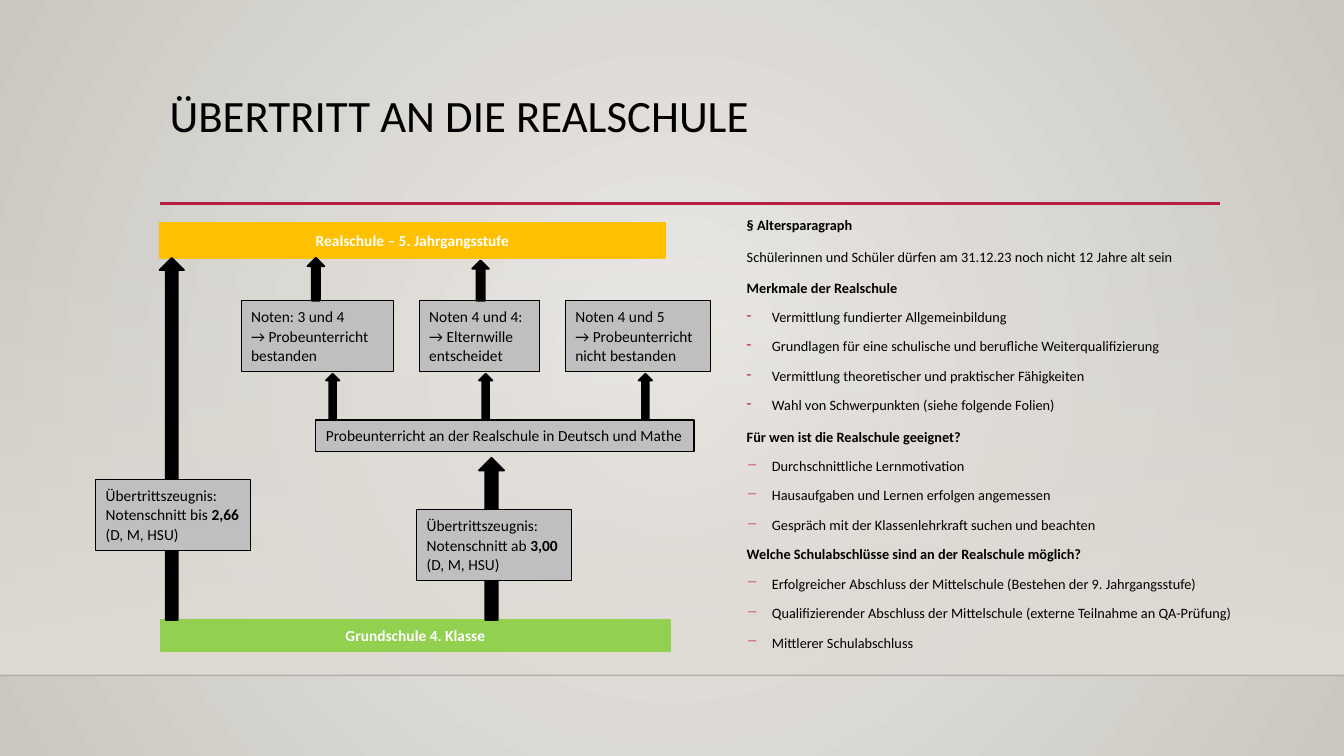
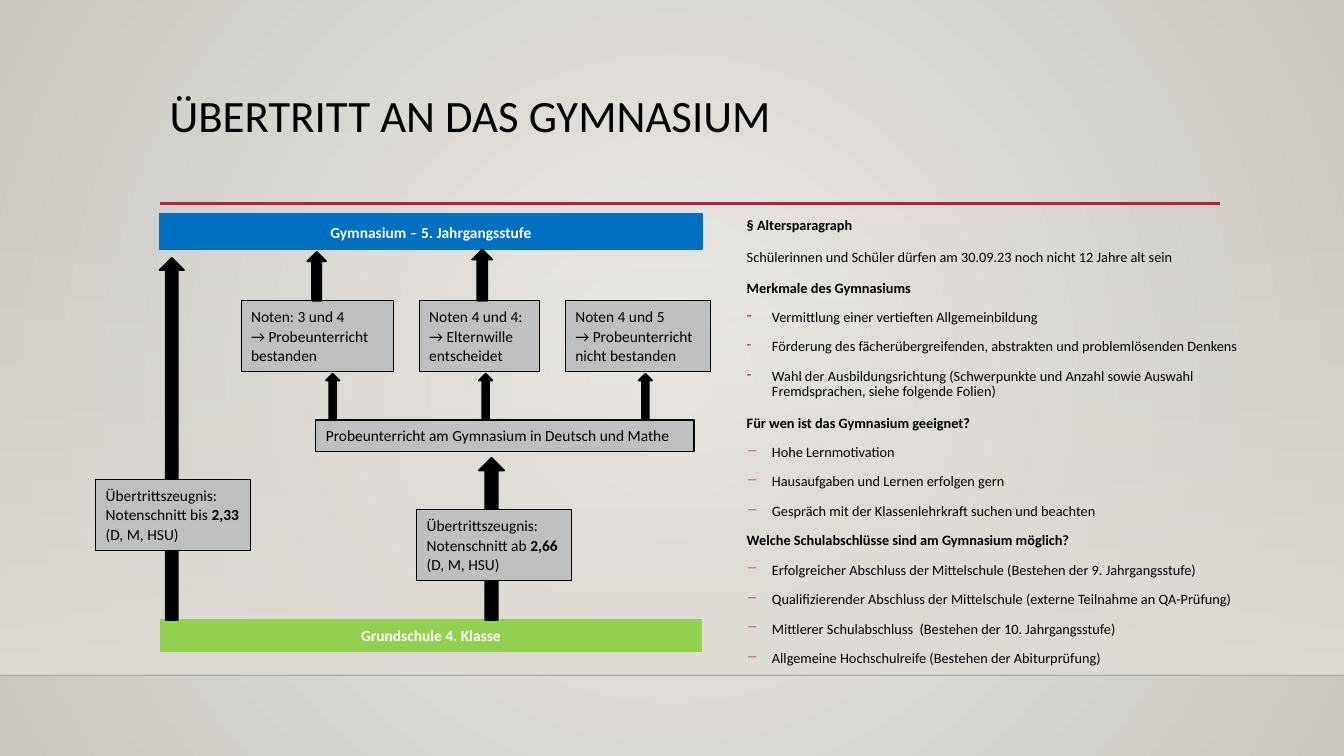
from collections import namedtuple

from lxml.etree import SubElement
from pptx import Presentation
from pptx.dml.color import RGBColor
from pptx.enum.shapes import MSO_CONNECTOR, MSO_SHAPE
from pptx.enum.text import MSO_ANCHOR, PP_ALIGN
from pptx.oxml.ns import qn
from pptx.util import Inches, Pt

BLACK = RGBColor(0x00, 0x00, 0x00)
WHITE = RGBColor(0xFF, 0xFF, 0xFF)
RED = RGBColor(0xB7, 0x1E, 0x42)
GREY = RGBColor(0xBF, 0xBF, 0xBF)
GREEN = RGBColor(0x92, 0xD0, 0x50)
YELLOW = RGBColor(0xFF, 0xC0, 0x00)
BLUE = RGBColor(0x00, 0x70, 0xC0)
BAND = RGBColor(0xDF, 0xDB, 0xD5)
PAPER_LIGHT = RGBColor(0xEC, 0xEA, 0xE7)
PAPER_DARK = RGBColor(0xCA, 0xC7, 0xC1)
FONT = "Calibri"

# The slide is a grid of 160 columns and 90 rows of equal size
WIDTH, HEIGHT = Inches(13.33), Inches(7.5)
CELL = HEIGHT / 90

Box = namedtuple("Box", "left top width height")
School = namedtuple("School", "title name colour bar_top bar_width ground_width "
                    "final_arrows exam direct_grade exam_grade notes")

BAND_BOX = Box(0, 26.5, WIDTH / CELL, 53.9)
TITLE_BOX = Box(19, 10.6, 126, 13.9)
DIAGRAM_BOX = Box(11.4, 25.5, 73.2, 52)
NOTES_BOX = Box(87.7, 25.2, 61.7, 54)

# Outcomes of the trial lessons: left, width, lines, left of the arrow below
OUTCOMES = [
    (17.3, 18.1, ["Noten: 3 und 4", "→ Probeunterricht bestanden"], 27.4),
    (38.5, 14.3, ["Noten 4 und 4:", "→ Elternwille entscheidet"], 45.6),
    (55.9, 17.3, ["Noten 4 und 5", "→ Probeunterricht nicht bestanden"], 64.6),
]
DEGREES = [
    "Erfolgreicher Abschluss der Mittelschule (Bestehen der 9. Jahrgangsstufe)",
    "Qualifizierender Abschluss der Mittelschule (externe Teilnahme an QA-Prüfung)",
]
ADVICE = "Gespräch mit der Klassenlehrkraft suchen und beachten"

# Notes: heading, bullet sign (empty for plain text), entries
SCHOOLS = [
    School(
        "ÜBERTRITT AN DIE REALSCHULE", "Realschule", YELLOW, 1, 60.2, 60.7,
        [(25.2, 5.2, 2), (44.8, 5.5, 2)],
        "Probeunterricht an der Realschule in Deutsch und Mathe", "2,66", "3,00",
        [
            ("§ Altersparagraph", "",
             ["Schülerinnen und Schüler dürfen am 31.12.23 noch nicht 12 Jahre alt sein"]),
            ("Merkmale der Realschule", "-",
             ["Vermittlung fundierter Allgemeinbildung",
              "Grundlagen für eine schulische und berufliche Weiterqualifizierung",
              "Vermittlung theoretischer und praktischer Fähigkeiten",
              "Wahl von Schwerpunkten (siehe folgende Folien)"]),
            ("Für wen ist die Realschule geeignet?", "−",
             ["Durchschnittliche Lernmotivation",
              "Hausaufgaben und Lernen erfolgen angemessen", ADVICE]),
            ("Welche Schulabschlüsse sind an der Realschule möglich?", "−",
             DEGREES + ["Mittlerer Schulabschluss"]),
        ]),
    School(
        "ÜBERTRITT AN DAS GYMNASIUM", "Gymnasium", BLUE, 0, 64.6, 64.4,
        [(25.2, 4.5, 2.2), (44.8, 4.2, 2.4)],
        "Probeunterricht am Gymnasium in Deutsch und Mathe", "2,33", "2,66",
        [
            ("§ Altersparagraph", "",
             ["Schülerinnen und Schüler dürfen am 30.09.23 noch nicht 12 Jahre alt sein"]),
            ("Merkmale des Gymnasiums", "-",
             ["Vermittlung einer vertieften Allgemeinbildung",
              "Förderung des fächerübergreifenden, abstrakten und problemlösenden Denkens",
              "Wahl der Ausbildungsrichtung (Schwerpunkte und Anzahl sowie Auswahl "
              "Fremdsprachen, siehe folgende Folien)"]),
            ("Für wen ist das Gymnasium geeignet?", "−",
             ["Hohe Lernmotivation", "Hausaufgaben und Lernen erfolgen gern", ADVICE]),
            ("Welche Schulabschlüsse sind am Gymnasium möglich?", "−",
             DEGREES + ["Mittlerer Schulabschluss  (Bestehen der 10. Jahrgangsstufe)",
                        "Allgemeine Hochschulreife (Bestehen der Abiturprüfung)"]),
        ]),
]


def cells(*counts):
    return [round(count * CELL) for count in counts]


def inside(box, left, top, width, height):
    return Box(box.left + left, box.top + top, width, height)


def set_font(paragraph, size, colour=BLACK, bold=False):
    font = paragraph.font
    font.name, font.size, font.bold = FONT, Pt(size), bold
    font.color.rgb = colour


def set_alpha(element, percent):
    colour = next(element.iter(qn("a:srgbClr")))
    SubElement(colour, qn("a:alpha")).set("val", str(percent * 1000))


def set_gradient(fill, *colours):
    fill.gradient()
    for stop, colour in zip(fill.gradient_stops, colours):
        stop.color.rgb = colour


def add_box(slide, kind, box, fill, line, line_width):
    shape = slide.shapes.add_shape(kind, *cells(*box))
    shape.shadow.inherit = False
    shape.fill.solid()
    shape.fill.fore_color.rgb = fill
    shape.line.color.rgb = line
    shape.line.width = Pt(line_width)
    return shape


def add_rule(slide, left, right, row, colour, width):
    start_x, end_x, y = cells(left, right, row)
    rule = slide.shapes.add_connector(MSO_CONNECTOR.STRAIGHT, start_x, y, end_x, y)
    rule.line.color.rgb = colour
    rule.line.width = Pt(width)
    SubElement(rule.element.spPr, qn("a:effectLst"))
    return rule


def add_bar(slide, box, text, colour):
    bar = add_box(slide, MSO_SHAPE.RECTANGLE, box, colour, colour, 1.25)
    bar.text_frame.vertical_anchor = MSO_ANCHOR.MIDDLE
    paragraph = bar.text_frame.paragraphs[0]
    paragraph.text = text
    paragraph.alignment = PP_ALIGN.CENTER
    set_font(paragraph, 11, WHITE, True)


def add_arrow(slide, box, left, top, width, bottom):
    add_box(slide, MSO_SHAPE.UP_ARROW, inside(box, left, top, width, bottom - top),
            BLACK, BLACK, 1.25)


def add_card(slide, box, lines):
    """Grey box with text lines; words between asterisks are bold."""
    card = add_box(slide, MSO_SHAPE.RECTANGLE, box, GREY, BLACK, 0.75)
    frame = card.text_frame
    frame.word_wrap = True
    frame.vertical_anchor = MSO_ANCHOR.TOP
    paragraph = frame.paragraphs[0]
    paragraph.alignment = PP_ALIGN.LEFT
    paragraph.line_spacing = 1.07
    set_font(paragraph, 11)
    for number, line in enumerate(lines):
        if number:
            paragraph.add_line_break()
        for position, part in enumerate(line.split("*")):
            run = paragraph.add_run()
            run.text = part
            if position % 2:
                run.font.bold = True


def add_text_box(slide, box):
    frame = slide.shapes.add_textbox(*cells(*box)).text_frame
    frame.word_wrap = True
    return frame


def style_master(master):
    """Radial background shared by all slides."""
    set_gradient(master.background.fill, PAPER_LIGHT, PAPER_DARK)
    gradient = next(master.element.iter(qn("a:gradFill")))
    gradient.remove(gradient.find(qn("a:lin")))
    circle = SubElement(gradient, qn("a:path"))
    circle.set("path", "circle")
    centre = SubElement(circle, qn("a:fillToRect"))
    for side in "ltrb":
        centre.set(side, "50000")


def add_frame(slide, title):
    # Band fading in towards the bottom, with its edge
    band = add_box(slide, MSO_SHAPE.RECTANGLE, BAND_BOX, BAND, BAND, 1)
    band.line.fill.background()
    set_gradient(band.fill, BAND, BAND)
    band.fill.gradient_angle = 270
    set_alpha(band.element.spPr, 0)
    edge = add_rule(slide, 0, BAND_BOX.width, BAND_BOX.top + BAND_BOX.height, BLACK, 1)
    set_alpha(edge.element.spPr, 20)
    # Title and red rule
    add_rule(slide, 19.1, 145.2, 24.2, RED, 2.5)
    paragraph = add_text_box(slide, TITLE_BOX).paragraphs[0]
    paragraph.text = title
    paragraph.line_spacing = 0.9
    set_font(paragraph, 32)


def add_diagram(slide, box, school):
    ground, exam_top, outcome_top, card_height = 48.3, 24.5, 10.3, 8.4
    # Start and goal
    add_bar(slide, inside(box, 7.7, ground, school.ground_width, 3.7),
            "Grundschule 4. Klasse", GREEN)
    add_bar(slide, inside(box, 7.6, school.bar_top, school.bar_width, 4.2),
            f"{school.name} – 5. Jahrgangsstufe", school.colour)
    # Direct way and way through the trial lessons
    ways = [
        (7.6, 5.2, 2.9, 0, 31.6, f"bis *{school.direct_grade}*"),
        (45.6, 29, 3, 38.2, 35.2, f"ab *{school.exam_grade}*"),
    ]
    for arrow_left, arrow_top, arrow_width, left, top, grade in ways:
        add_arrow(slide, box, arrow_left, arrow_top, arrow_width, ground)
        add_card(slide, inside(box, left, top, 18.4, card_height),
                 ["Übertrittszeugnis:", f"Notenschnitt {grade} (D, M, HSU)"])
    # Trial lessons and their outcomes
    add_card(slide, inside(box, 26.2, exam_top, 45, 3.7), [school.exam])
    for left, width, lines, arrow_left in OUTCOMES:
        add_card(slide, inside(box, left, outcome_top, width, card_height), lines)
        add_arrow(slide, box, arrow_left, 19, 1.6, exam_top)
    for left, top, width in school.final_arrows:
        add_arrow(slide, box, left, top, width, outcome_top)


def add_bullet(paragraph, sign):
    properties = paragraph._p.get_or_add_pPr()
    properties.set("marL", str(Inches(0.25)))
    properties.set("indent", str(-Inches(0.25)))
    colour = SubElement(properties, qn("a:buClr"))
    SubElement(colour, qn("a:srgbClr")).set("val", str(RED))
    SubElement(properties, qn("a:buChar")).set("char", sign)


def add_notes_column(slide, box, notes):
    frame = add_text_box(slide, box)
    for number, (heading, sign, entries) in enumerate(notes):
        for position, text in enumerate([heading] + entries):
            first = number == position == 0
            paragraph = frame.paragraphs[0] if first else frame.add_paragraph()
            paragraph.text = text
            if sign and position:
                add_bullet(paragraph, sign)
                paragraph.line_spacing = 0.9
            if not first:
                paragraph.space_before = Pt(10)
            set_font(paragraph, 10.2, bold=position == 0)
    # The last heading is set as tightly as its entries
    frame.paragraphs[-len(entries) - 1].line_spacing = 0.9


def main():
    presentation = Presentation()
    presentation.slide_width, presentation.slide_height = WIDTH, HEIGHT
    style_master(presentation.slide_master)
    for school in SCHOOLS:
        slide = presentation.slides.add_slide(presentation.slide_layouts[6])
        add_frame(slide, school.title)
        add_diagram(slide, DIAGRAM_BOX, school)
        add_notes_column(slide, NOTES_BOX, school.notes)
    presentation.save("out.pptx")


if __name__ == "__main__":
    main()
